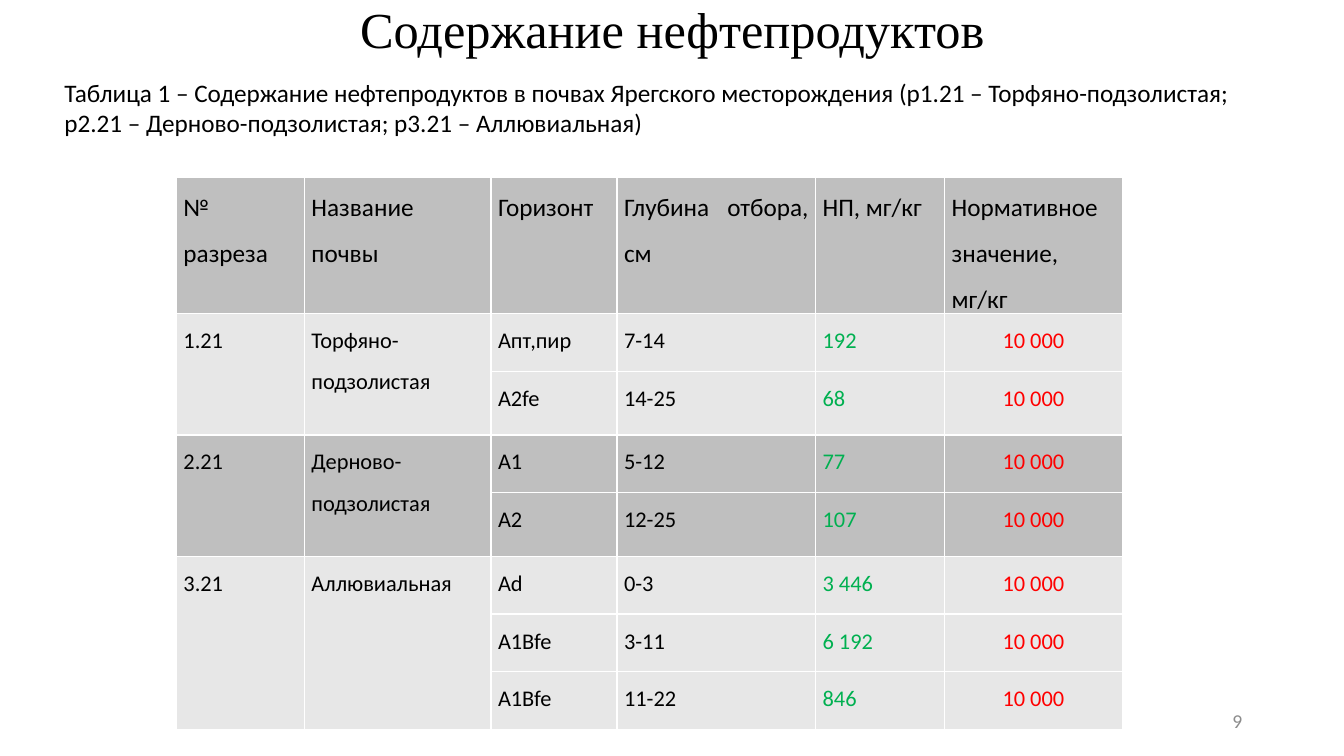
from lxml import etree
from pptx import Presentation
from pptx import util as u
from pptx.dml.color import RGBColor
from pptx.enum import text as t
from pptx.oxml.ns import qn

WIDE, HIGH = 13.33, 7.5
HUES = {"ink": "000000", "dark": "BFBFBF", "pale": "E7E7E7", "rule": "FFFFFF",
        "good": "00B050", "limit": "FF0000", "page": "8C8C8C"}
COLS = [1.27, 1.85, 1.25, 1.97, 1.28, 1.76]
ROWS = [1.17, 0.56, 0.62, 0.56, 0.62, 0.56, 0.56, 0.56]
HEADS = ["№ разреза", "Название почвы", "Горизонт", "Глубина отбора, см",
         "НП, мг/кг", "Нормативное значение, мг/кг"]
LIMIT = "10 000"
SOILS = [
    ("1.21", "Торфяно-подзолистая", "pale",
     [("Апт,пир", "7-14", "192"), ("А2fe", "14-25", "68")]),
    ("2.21", "Дерново-подзолистая", "dark",
     [("A1", "5-12", "77"), ("A2", "12-25", "107")]),
    ("3.21", "Аллювиальная", "pale",
     [("Ad", "0-3", "3 446"), ("A1Bfe", "3-11", "6 192"), ("A1Bfe", "11-22", "846")]),
]


def hue(name):
    return RGBColor.from_string(HUES[name])


def write(frame, words, size, color="ink", face="Calibri", align=t.PP_ALIGN.LEFT):
    frame.text = words
    frame.word_wrap = True
    para = frame.paragraphs[0]
    para.alignment = align
    for run in para.runs:
        run.font.size = u.Pt(size)
        run.font.name = face
        run.font.color.rgb = hue(color)
    return para


def title(slide, box, words):
    shape = slide.shapes.title
    shape.left, shape.top, shape.width, shape.height = map(u.Inches, box)
    frame = shape.text_frame
    frame.auto_size = t.MSO_AUTO_SIZE.NONE
    frame.vertical_anchor = t.MSO_ANCHOR.TOP
    para = write(frame, words, 36, face="Times New Roman", align=t.PP_ALIGN.CENTER)
    para.line_spacing = 0.9


def label(slide, box, words, size, **style):
    shape = slide.shapes.add_textbox(*map(u.Inches, box))
    write(shape.text_frame, words, size, **style)
    return shape


def border(cell):
    props = cell._tc.get_or_add_tcPr()
    for side in ("lnL", "lnR", "lnT", "lnB"):
        line = etree.SubElement(props, qn("a:" + side), w=str(u.Pt(1)))
        fill = etree.SubElement(line, qn("a:solidFill"))
        etree.SubElement(fill, qn("a:srgbClr"), val=HUES["rule"])


def fill_row(grid, row, words, shade, size, colors):
    for col, (word, color) in enumerate(zip(words, colors)):
        cell = grid.cell(row, col)
        cell.margin_left = cell.margin_right = u.Inches(0.07)
        cell.margin_top = cell.margin_bottom = 0
        border(cell)
        cell.fill.solid()
        cell.fill.fore_color.rgb = hue(shade)
        align = t.PP_ALIGN.CENTER if color == "limit" else t.PP_ALIGN.JUSTIFY
        para = write(cell.text_frame, word, size, color, align=align)
        para.line_spacing = 1.5
        para.space_after = u.Pt(8)


def table(slide, box):
    left, top, width, height = box
    grid = slide.shapes.add_table(len(ROWS), len(COLS), *map(u.Inches, box)).table
    for col, share in zip(grid.columns, COLS):
        col.width = u.Inches(width * share / sum(COLS))
    for row, share in zip(grid.rows, ROWS):
        row.height = u.Inches(height * share / sum(ROWS))
    fill_row(grid, 0, HEADS, "dark", 18, ["ink"] * len(COLS))
    colors = ["ink"] * 4 + ["good", "limit"]
    row = 1
    for code, name, shade, layers in SOILS:
        first = row
        for layer in layers:
            lead = (code, name) if row == first else ("", "")
            fill_row(grid, row, [*lead, *layer, LIMIT], shade, 16, colors)
            row += 1
        for col in (0, 1):
            grid.cell(first, col).merge(grid.cell(row - 1, col))


def main():
    deck = Presentation()
    deck.slide_width, deck.slide_height = u.Inches(WIDE), u.Inches(HIGH)
    slide = deck.slides.add_slide(deck.slide_layouts[5])
    title(slide, (1.17, 0, 11, 1.76), "Содержание нефтепродуктов")
    label(slide, (0.54, 0.72, 12.2, 0.71),
          "Таблица 1 – Содержание нефтепродуктов в почвах Ярегского месторождения "
          "(р1.21 – Торфяно-подзолистая; р2.21 – Дерново-подзолистая; "
          "р3.21 – Аллювиальная)", 18)
    table(slide, (1.75, 1.76, sum(COLS), 5.32))
    page = label(slide, (9.42, 6.95, 3, 0.4), "9", 14, color="page",
                 align=t.PP_ALIGN.RIGHT)
    page.text_frame.vertical_anchor = t.MSO_ANCHOR.MIDDLE
    deck.save("out.pptx")


if __name__ == "__main__":
    main()
